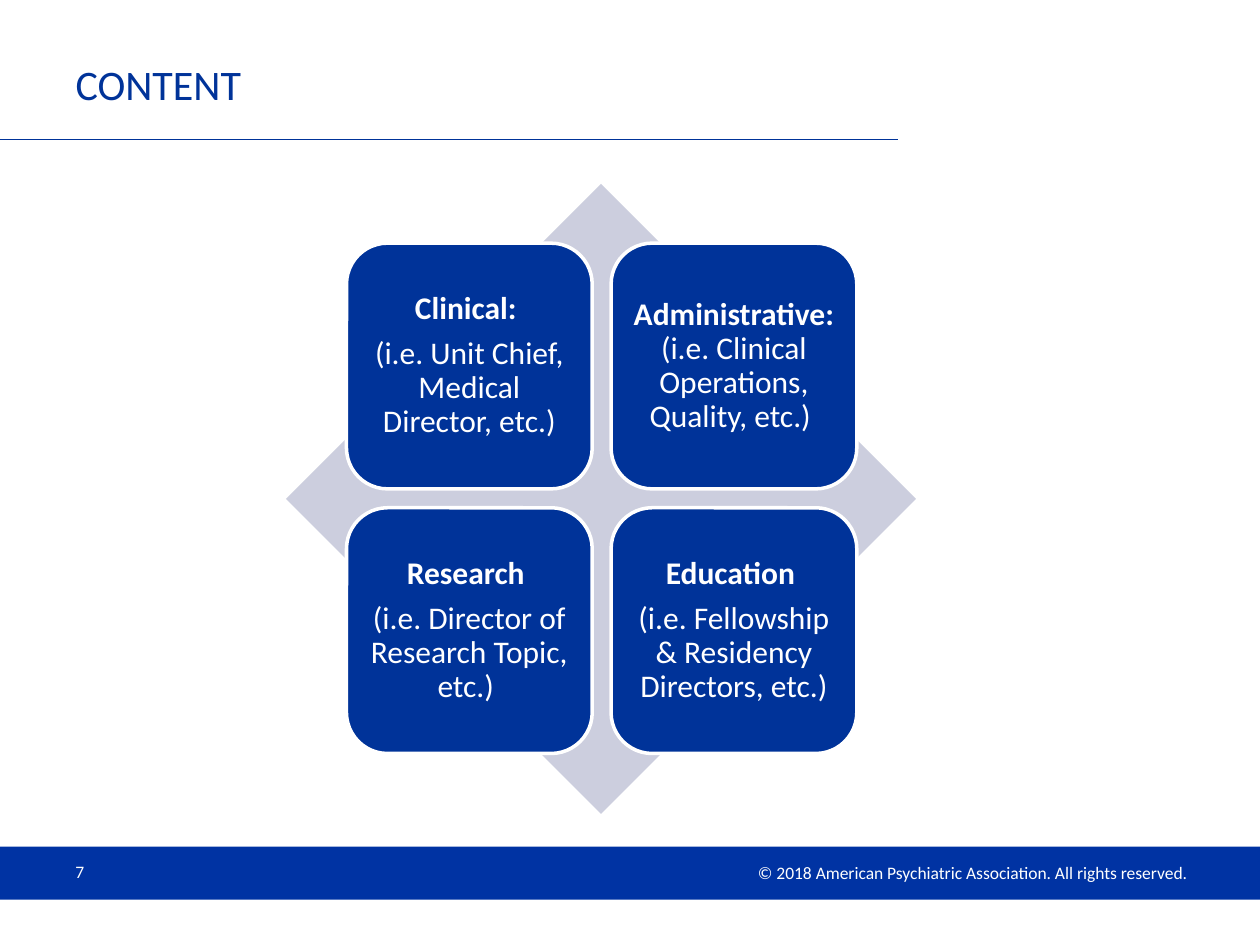
from dataclasses import dataclass

from lxml.etree import SubElement
from pptx import Presentation
from pptx.dml.color import RGBColor
from pptx.enum.shapes import MSO_CONNECTOR, MSO_SHAPE
from pptx.enum.text import MSO_ANCHOR, PP_ALIGN
from pptx.oxml.ns import qn
from pptx.util import Inches, Pt


@dataclass(frozen=True)
class Theme:
    font: str = "Calibri"
    navy: RGBColor = RGBColor(0x00, 0x33, 0x99)
    band: RGBColor = RGBColor(0x00, 0x33, 0xA3)
    backdrop: RGBColor = RGBColor(0xCC, 0xCE, 0xDE)
    light: RGBColor = RGBColor(0xFF, 0xFF, 0xFF)
    title_size: float = 24
    body_size: float = 18
    footer_size: float = 10


def apply(target, values):
    for name, value in values.items():
        setattr(target, name, value)


class SlideBuilder:
    """Draws themed elements on the current slide."""

    def __init__(self, slide, theme):
        self.slide = slide
        self.theme = theme

    def fill_text(self, frame, paragraphs, size, color, align, inset=None, spacing=None):
        apply(frame, {"word_wrap": True, "vertical_anchor": MSO_ANCHOR.MIDDLE})
        if inset is not None:
            sides = ("margin_left", "margin_top", "margin_right", "margin_bottom")
            apply(frame, dict.fromkeys(sides, Inches(inset)))
        for index, runs in enumerate(paragraphs):
            paragraph = frame.add_paragraph() if index else frame.paragraphs[0]
            apply(paragraph, {"alignment": align, **(spacing or {})})
            for words, bold in runs:
                run = paragraph.add_run()
                run.text = words
                apply(run.font, {"name": self.theme.font, "size": Pt(size), "bold": bold})
                run.font.color.rgb = color

    def title(self, words, *box):
        heading = self.slide.shapes.title
        apply(heading, dict(zip(("left", "top", "width", "height"), map(Inches, box))))
        self.fill_text(heading.text_frame, [[(words, False)]], self.theme.title_size,
                       self.theme.navy, PP_ALIGN.LEFT)

    def footer(self, words, align, *box):
        note = self.slide.shapes.add_textbox(*map(Inches, box))
        self.fill_text(note.text_frame, [[(words, False)]], self.theme.footer_size,
                       self.theme.light, align)

    def shape(self, kind, fill, *box):
        block = self.slide.shapes.add_shape(kind, *map(Inches, box))
        block.shadow.inherit = False
        block.fill.solid()
        block.fill.fore_color.rgb = fill
        block.line.fill.background()
        return block

    def card(self, paragraphs, *box):
        card = self.shape(MSO_SHAPE.ROUNDED_RECTANGLE, self.theme.navy, *box)
        card.line.color.rgb = self.theme.light
        card.line.width = Pt(2)
        spacing = {"line_spacing": 0.9, "space_after": Pt(0.35 * self.theme.body_size)}
        self.fill_text(card.text_frame, paragraphs, self.theme.body_size,
                       self.theme.light, PP_ALIGN.CENTER, 0.07, spacing)

    def rule(self, *ends):
        rule = self.slide.shapes.add_connector(MSO_CONNECTOR.STRAIGHT, *map(Inches, ends))
        rule.line.color.rgb = self.theme.navy
        rule.line.width = Pt(0.75)
        SubElement(rule._element.spPr, qn("a:effectLst"))


def main():
    deck = Presentation()
    apply(deck, {"slide_width": Inches(10), "slide_height": Inches(7.5)})
    theme = Theme()
    builder = SlideBuilder(deck.slides.add_slide(deck.slide_layouts[5]), theme)

    builder.shape(MSO_SHAPE.RECTANGLE, theme.band, 0, 6.72, 10, 0.42)
    builder.rule(0, 1.11, 7.13, 1.11)
    builder.footer("© 2018 American Psychiatric Association. All rights reserved. ",
                   PP_ALIGN.RIGHT, 5.18, 6.79, 4.37, 0.27)
    builder.footer("7", PP_ALIGN.LEFT, 0.5, 6.72, 2.33, 0.4)
    builder.title("CONTENT", 0.5, 0.34, 6.63, 0.64)

    builder.shape(MSO_SHAPE.DIAMOND, theme.backdrop, 2.27, 1.46, 5, 5)
    roles = [
        [[("Clinical: ", True)], [("(i.e. Unit Chief, Medical Director, etc.)", False)]],
        [[("Administrative: ", True),
          ("(i.e. Clinical Operations, Quality, etc.) ", False)]],
        [[("Research ", True)], [("(i.e. Director of Research Topic, etc.) ", False)]],
        [[("Education ", True)],
         [("(i.e. Fellowship & Residency Directors, etc.)", False)]],
    ]
    side, pitch = 1.95, 2.1
    for index, role in enumerate(roles):
        row, column = divmod(index, 2)
        builder.card(role, 2.75 + column * pitch, 1.93 + row * pitch, side, side)

    deck.save("out.pptx")


if __name__ == "__main__":
    main()
